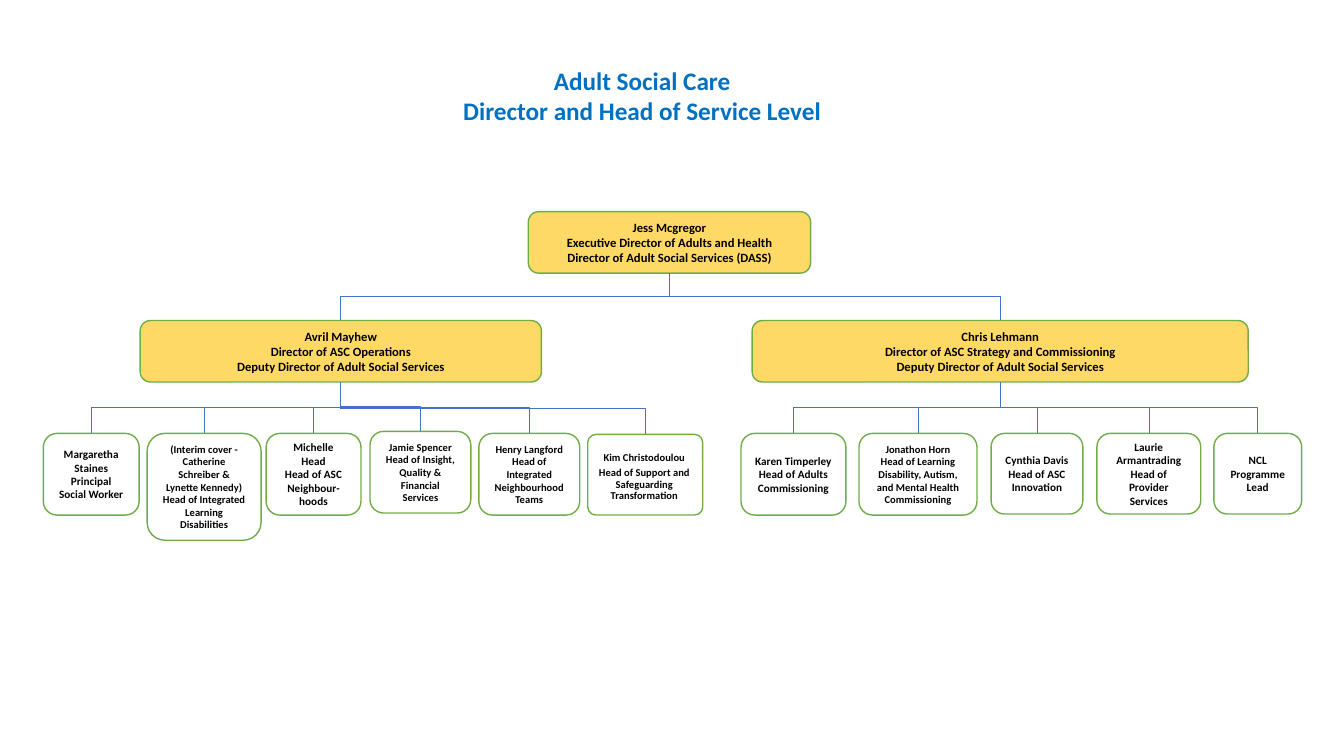
from lxml import etree
from pptx import Presentation
from pptx import util as u
from pptx.dml.color import RGBColor
from pptx.enum import shapes, text
from pptx.oxml import ns

GREEN, GOLD, WHITE, BLUE = "70AD47", "FFD966", "FFFFFF", "4472C4"


def color(hex_value):
    return RGBColor.from_string(hex_value)


def write(shape, wording, size, ink="000000", anchor=text.MSO_ANCHOR.MIDDLE,
          inset=(0.1, 0.05), spacing=1.0, after=0):
    frame = shape.text_frame
    frame.word_wrap = True
    frame.vertical_anchor = anchor
    frame.margin_left = frame.margin_right = u.Inches(inset[0])
    frame.margin_top = frame.margin_bottom = u.Inches(inset[1])
    frame.text = wording
    for paragraph in frame.paragraphs:
        paragraph.alignment = text.PP_ALIGN.CENTER
        paragraph.line_spacing = spacing
        paragraph.space_before = u.Pt(0)
        paragraph.space_after = u.Pt(after)
        font = paragraph.runs[0].font
        font.name, font.size, font.bold = "Calibri", u.Pt(size), True
        font.color.rgb = color(ink)


prs = Presentation()
prs.slide_width, prs.slide_height = u.Inches(13.33), u.Inches(7.5)
slide = prs.slides.add_slide(prs.slide_layouts[5])

# Title
title = slide.shapes.title
title.left, title.top = u.Inches(4.46), u.Inches(0.6)
title.width, title.height = u.Inches(3.82), u.Inches(0.71)
write(title, "Adult Social Care\nDirector and Head of Service Level", 18,
      ink="0070C0", anchor=text.MSO_ANCHOR.TOP)

# Posts: key, manager, left, top, width, height, text size, wording
posts = [
    ("dass", None, 5.24, 2.1, 2.8, 0.61, 9,
     "Jess Mcgregor\nExecutive Director of Adults and Health\n"
     "Director of Adult Social Services (DASS)"),
    ("operations", "dass", 1.39, 3.18, 3.98, 0.61, 9,
     "Avril Mayhew\nDirector of ASC Operations\nDeputy Director of Adult Social Services"),
    ("strategy", "dass", 7.46, 3.18, 4.92, 0.61, 9,
     "Chris Lehmann\nDirector of ASC Strategy and Commissioning\n"
     "Deputy Director of Adult Social Services"),
    ("social work", "operations", 0.43, 4.3, 0.95, 0.81, 8,
     "Margaretha Staines\nPrincipal Social Worker"),
    ("disabilities", "operations", 1.46, 4.3, 1.13, 1.06, 7.5,
     "(Interim cover - Catherine Schreiber & Lynette Kennedy)\n"
     "Head of Integrated Learning Disabilities"),
    ("neighbourhoods", "operations", 2.64, 4.3, 0.94, 0.81, 8,
     "Michelle Head\nHead of ASC Neighbour-hoods"),
    ("insight", "operations", 3.67, 4.28, 1, 0.81, 7.5,
     "Jamie Spencer\nHead of Insight, Quality & Financial Services"),
    ("teams", "operations", 4.75, 4.3, 1, 0.81, 7.5,
     "Henry Langford\nHead of Integrated Neighbourhood Teams"),
    ("transformation", "operations", 5.83, 4.31, 1.14, 0.8, 7.5, ""),
    ("adults", "strategy", 7.35, 4.3, 1.04, 0.81, 8,
     "Karen Timperley\nHead of Adults Commissioning"),
    ("mental health", "strategy", 8.52, 4.3, 1.17, 0.81, 7.5,
     "Jonathon Horn\nHead of Learning Disability, Autism, and Mental Health Commissioning"),
    ("innovation", "strategy", 9.83, 4.3, 0.91, 0.8, 8,
     "Cynthia Davis\nHead of ASC Innovation"),
    ("providers", "strategy", 10.88, 4.3, 1.03, 0.8, 8,
     "Laurie Armantrading\nHead of Provider Services"),
    ("programme", "strategy", 12.04, 4.3, 0.87, 0.8, 8, "NCL Programme Lead"),
]
boxes = {}
for key, manager, left, top, width, height, size, wording in posts:
    box = slide.shapes.add_shape(
        shapes.MSO_SHAPE.ROUNDED_RECTANGLE,
        u.Inches(left), u.Inches(top), u.Inches(width), u.Inches(height))
    box.shadow.inherit = False
    box.fill.solid()
    box.fill.fore_color.rgb = color(GOLD if size == 9 else WHITE)
    box.line.color.rgb = color(GREEN)
    box.line.width = u.Pt(1)
    if wording:
        write(box, wording, size)
    boxes[key] = box

# Transformation post: tighter corners and an inner label
boxes["transformation"].adjustments[0] = 0.1
label = slide.shapes.add_shape(
    shapes.MSO_SHAPE.RECTANGLE,
    u.Inches(5.87), u.Inches(4.38), u.Inches(1.04), u.Inches(0.71))
label.shadow.inherit = False
label.fill.solid()
label.fill.fore_color.rgb = color(WHITE)
label.line.fill.background()
write(label, "Kim Christodoulou\nHead of Support and Safeguarding Transformation", 7.5,
      inset=(0.02, 0.01), spacing=0.9, after=2.6)

# Reporting lines: elbows turned a quarter so they leave and arrive vertically
for key, manager, *_ in posts:
    if manager is None:
        continue
    upper, lower = boxes[manager], boxes[key]
    start_x, end_x = (b.left + b.width // 2 for b in (upper, lower))
    start_y, end_y = upper.top + upper.height, lower.top
    drop, reach = end_y - start_y, abs(end_x - start_x)
    link = slide.shapes.add_connector(
        shapes.MSO_CONNECTOR.ELBOW, start_x, start_y, end_x, end_y)
    link.begin_connect(upper, 2)
    link.end_connect(lower, 0)
    link.left = (start_x + end_x - drop) // 2
    link.top = (start_y + end_y - reach) // 2
    link.width, link.height = drop, reach
    goes_right = end_x > start_x
    properties = link._element.spPr
    frame = properties.find(ns.qn("a:xfrm"))
    frame.set("rot", str((270 if goes_right else 90) * 60000))
    frame.set("flipH", "1" if goes_right else "0")
    frame.set("flipV", "0")
    link.line.color.rgb = color(BLUE)
    link.line.width = u.Pt(0.5)
    etree.SubElement(properties, ns.qn("a:effectLst"))

prs.save("out.pptx")
